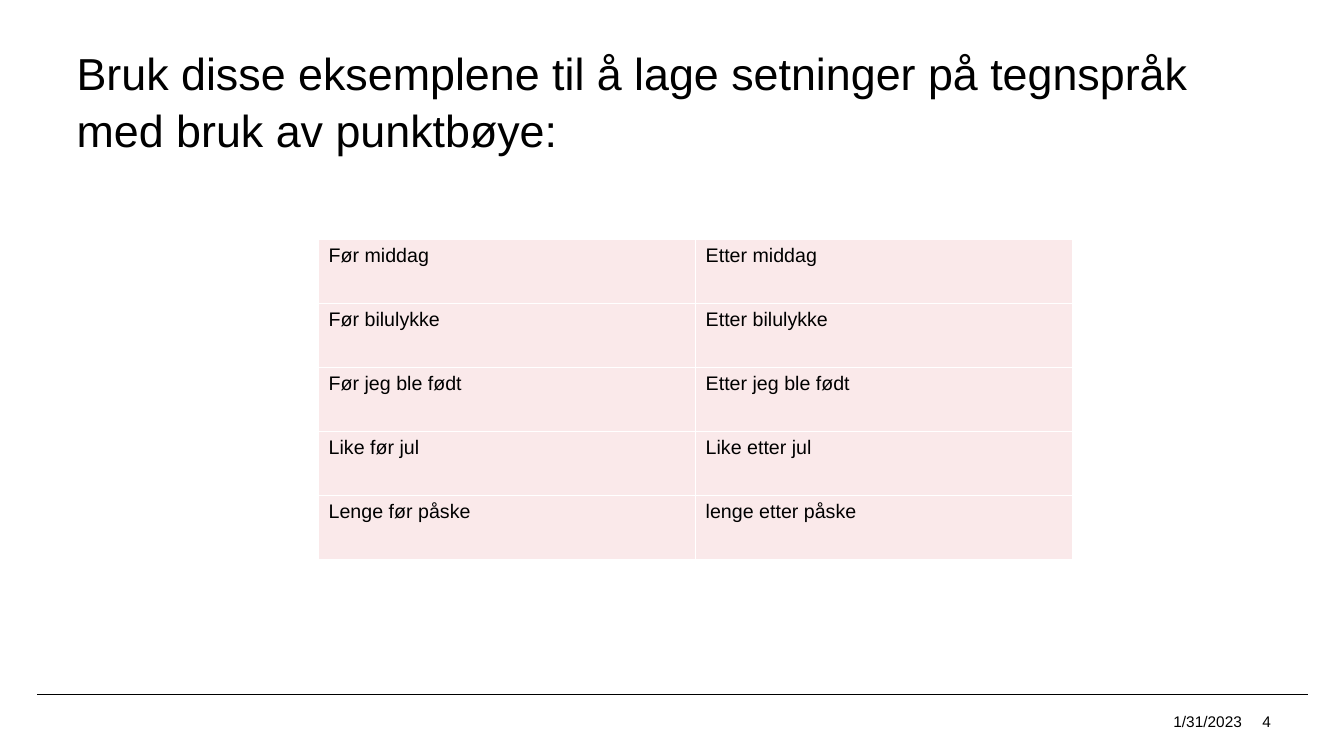
"""Build a slide with a table of before and after phrases."""
from pptx import Presentation, util as u
from pptx.dml.color import RGBColor
from pptx.enum import shapes, text
from pptx.oxml import parse_xml
from pptx.oxml.ns import nsdecls

BLACK, WHITE, PINK = "000000", "FFFFFF", "FAE9EA"
PHRASES = [
    ("Før middag", "Etter middag"),
    ("Før bilulykke", "Etter bilulykke"),
    ("Før jeg ble født", "Etter jeg ble født"),
    ("Like før jul", "Like etter jul"),
    ("Lenge før påske", "lenge etter påske"),
]
COL_W, ROW_H = u.Inches(3.74), u.Inches(0.634)


def rgb(color):
    return RGBColor.from_string(color)


def write(tf, content, size, align=text.PP_ALIGN.LEFT):
    p = tf.paragraphs[0]
    p.alignment = align
    r = p.add_run()
    r.text = content
    for name, value in {"name": "Arial", "size": u.Pt(size), "bold": False}.items():
        setattr(r.font, name, value)
    r.font.color.rgb = rgb(BLACK)
    return p


prs = Presentation()
prs.slide_width, prs.slide_height = u.Inches(13.33), u.Inches(7.5)
s = prs.slides.add_slide(prs.slide_layouts[5])
s.background.fill.solid()
s.background.fill.fore_color.rgb = rgb(WHITE)

rule_y = u.Inches(6.89)
rule = s.shapes.add_connector(
    shapes.MSO_CONNECTOR.STRAIGHT, u.Inches(0.37), rule_y, u.Inches(12.97), rule_y)
rule.line.color.rgb = rgb(BLACK)
rule.line.width = u.Pt(0.5)
rule._element.spPr.append(parse_xml(f"<a:effectLst {nsdecls('a')}/>"))

title = s.shapes.title
date, number = (s.shapes.add_textbox(0, 0, 0, 0) for _ in range(2))
boxes = [
    (title, (0.76, 0.64, 11.55, 0.7), 32, text.PP_ALIGN.LEFT,
     "Bruk disse eksemplene til å lage setninger på tegnspråk med bruk av punktbøye:"),
    (date, (10.64, 7.02, 1.68, 0.28), 11, text.PP_ALIGN.RIGHT, "1/31/2023"),
    (number, (12.52, 7.02, 0.43, 0.28), 11, text.PP_ALIGN.LEFT, "4"),
]
frame_format = {
    "margin_left": 0, "margin_right": 0, "margin_top": 0, "margin_bottom": 0,
    "word_wrap": True, "auto_size": text.MSO_AUTO_SIZE.NONE,
    "vertical_anchor": text.MSO_ANCHOR.MIDDLE,
}
for sp, place, size, align, content in boxes:
    for name, value in zip(("left", "top", "width", "height"), place):
        setattr(sp, name, u.Inches(value))
    for name, value in frame_format.items():
        setattr(sp.text_frame, name, value)
    write(sp.text_frame, content, size, align)
title.text_frame.paragraphs[0].line_spacing = 1.05

table = s.shapes.add_table(
    len(PHRASES), 2, u.Inches(3.16), u.Inches(2.38), 2 * COL_W, len(PHRASES) * ROW_H).table
table.first_row = table.horz_banding = False
for row, phrases in zip(table.rows, PHRASES):
    row.height = ROW_H
    for cell, phrase in zip(row.cells, phrases):
        write(cell.text_frame, phrase, 14)
        tcPr = cell._tc.get_or_add_tcPr()
        for side in ("lnL", "lnR", "lnT", "lnB"):
            tcPr.append(parse_xml(
                f'<a:{side} {nsdecls("a")} w="{u.Pt(0.68)}"><a:solidFill>'
                f'<a:srgbClr val="{WHITE}"/></a:solidFill></a:{side}>'))
        cell.fill.solid()
        cell.fill.fore_color.rgb = rgb(PINK)

prs.save("out.pptx")
